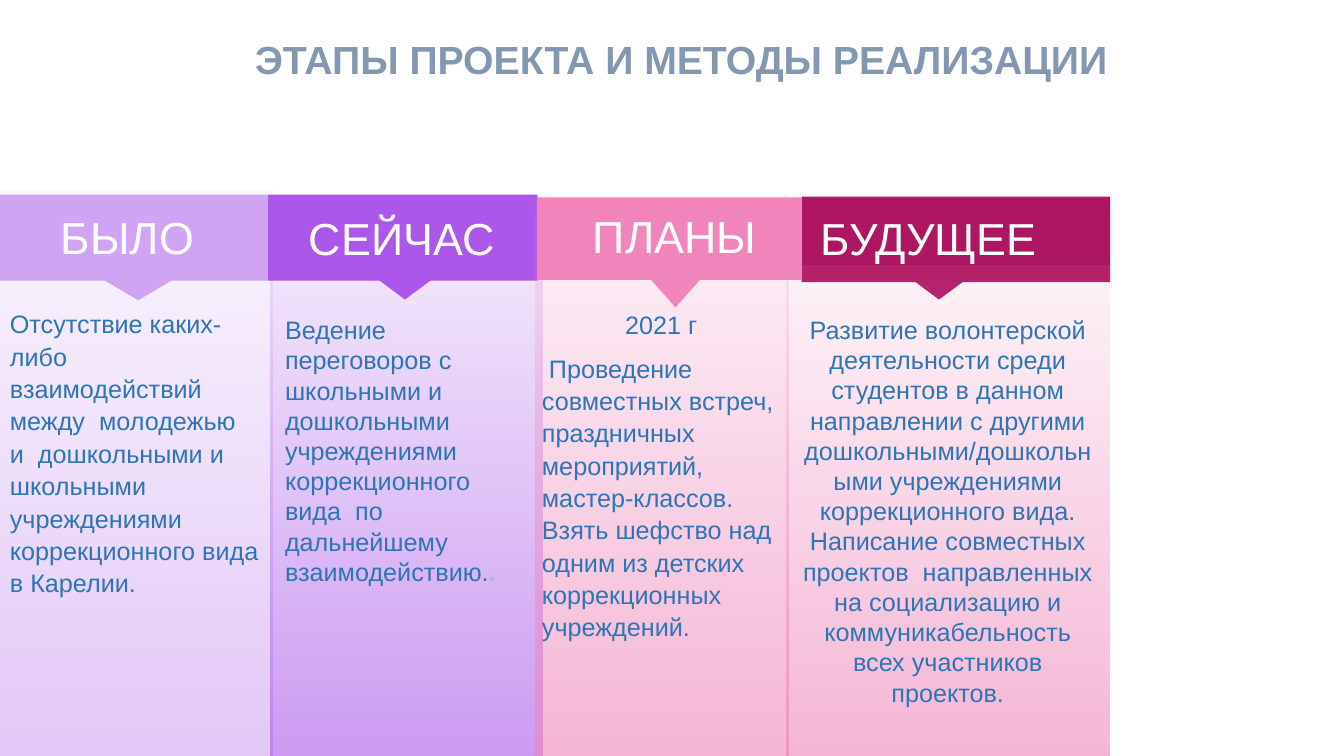
from lxml import etree
from pptx import Presentation
from pptx import util as u
from pptx.dml.color import RGBColor
from pptx.enum import shapes, text
from pptx.oxml import ns

Pt = u.Pt
SLIDE_W, SLIDE_H = 960, 540
FONT = "Arial"
COLORS = {"title": "8497B0", "body": "2E75B6", "dot": "ADB9CA", "white": "FFFFFF",
          "lilac": "D1A3F3", "violet": "AB58EA", "pink": "EF85BA", "berry": "AD1761"}
LEFT, CENTER = text.PP_ALIGN.LEFT, text.PP_ALIGN.CENTER
SPACED = {"line_spacing": 1.07, "space_after": Pt(8)}
SINGLE = {"line_spacing": 1.0, "space_after": Pt(8)}
TIGHT = {"line_spacing": 1.0, "space_after": Pt(0)}

# box is the header bar; arrow, caption and body are offset from its corner
COLUMNS = [
    {"box": (0, 139, 192, 61.5), "color": "lilac", "tint": "lilac",
     "panel": (-6.5, -3, 201.5), "arrow": (35.5, 38, 126.5, 37.5),
     "caption": (-4.5, 7), "head": "БЫЛО",
     "body": (0, 76.5, 193, 217.5), "format": SPACED,
     "paras": [(LEFT, [("Отсутствие каких-либо взаимодействий между  молодежью  "
                        "и  дошкольными и школьными учреждениями  "
                        "коррекционного вида в Карелии.", "body")])]},
    {"box": (191.5, 139, 192.5, 61.5), "color": "violet", "tint": "violet",
     "panel": (1.5, 2, 194.5), "arrow": (34.5, 28, 126.5, 47),
     "caption": (0, 8), "head": "СЕЙЧАС",
     "body": (5, 82, 189.5, 204), "format": SINGLE,
     "paras": [(LEFT, [("Ведение переговоров с школьными и дошкольными  "
                        "учреждениями коррекционного вида  по дальнейшему "
                        "взаимодействию.", "body"), (".", "dot")])]},
    {"box": (384, 141, 188.5, 59), "color": "pink", "tint": "pink",
     "panel": (-1.5, -1.5, 180.5), "arrow": (50, 24, 97, 54.5),
     "caption": (2.5, 4.5), "head": "ПЛАНЫ",
     "body": (-4, 75, 184.5, 248.5), "format": SPACED,
     "paras": [(CENTER, [("2021 г", "body")]),
               (LEFT, [(" Проведение совместных встреч, праздничных мероприятий, "
                        "мастер-классов. Взять шефство над одним из детских "
                        "коррекционных учреждений.", "body")])]},
    # The last column has its text in the panel, which lies on top
    {"box": (572.5, 140.5, 220.5, 61), "color": "berry", "tint": "pink",
     "panel": (-11, 49, 231), "arrow": (35, 26.5, 126.5, 47),
     "caption": (-4.5, 6.5), "head": "БУДУЩЕЕ",
     "body": None, "format": TIGHT,
     "paras": [(CENTER, [("Развитие волонтерской деятельности среди студентов в данном "
                          "направлении с другими дошкольными/дошкольными "
                          "учреждениями коррекционного вида.", "body")]),
               (CENTER, [("Написание совместных проектов  направленных на "
                          "социализацию и коммуникабельность всех участников "
                          "проектов.", "body")])]},
]


def rgb(name):
    return RGBColor.from_string(COLORS[name])


def set_all(obj, values):
    for name, value in values.items():
        setattr(obj, name, value)


def write(tf, paras, size, fmt, bold=False):
    """Fill a frame with (alignment, [(words, colour)]) paragraphs."""
    for i, (align, runs) in enumerate(paras):
        p = tf.paragraphs[0] if i == 0 else tf.add_paragraph()
        set_all(p, {"alignment": align, "space_before": Pt(0), **fmt})
        for words, color in runs:
            r = p.add_run()
            r.text = words
            set_all(r.font, {"size": Pt(size), "name": FONT,
                             "bold": bold or color == "dot"})
            r.font.color.rgb = rgb(color)


def add_text(s, box, paras, size, fmt):
    sp = s.shapes.add_textbox(*map(Pt, box))
    set_all(sp.text_frame, {"word_wrap": True,
                            "auto_size": text.MSO_AUTO_SIZE.SHAPE_TO_FIT_TEXT})
    write(sp.text_frame, paras, size, fmt)


def add_block(s, kind, box, color):
    sp = s.shapes.add_shape(kind, *map(Pt, box))
    sp.shadow.inherit = False
    sp.line.fill.background()
    sp.fill.solid()
    sp.fill.fore_color.rgb = rgb(color)
    return sp


def add_panel(s, box, color):
    """Rectangle that grows denser towards the bottom."""
    sp = add_block(s, shapes.MSO_SHAPE.RECTANGLE, box, color)
    sp.fill.gradient()
    sp.fill.gradient_angle = 270
    for stop, opacity in zip(sp.fill.gradient_stops, (10, 60)):
        stop.color.rgb = rgb(color)
    for clr, opacity in zip(sp.fill._xPr.iter(ns.qn("a:srgbClr")), (10, 60)):
        etree.SubElement(clr, ns.qn("a:alpha"), val=str(opacity * 1000))
    return sp


def add_title(s, box):
    sp = s.shapes.title
    set_all(sp, dict(zip(("left", "top", "width", "height"), map(Pt, box))))
    set_all(sp.text_frame, {"word_wrap": False,
                            "vertical_anchor": text.MSO_ANCHOR.TOP,
                            "auto_size": text.MSO_AUTO_SIZE.SHAPE_TO_FIT_TEXT})
    write(sp.text_frame, [(LEFT, [("ЭТАПЫ ПРОЕКТА И МЕТОДЫ РЕАЛИЗАЦИИ", "title")])],
          28, SPACED, bold=True)


def add_column(s, box, col):
    x, y, w, h = box

    def place(dx, dy, *size):
        return (x + dx, y + dy, *size)

    dx, dy, panel_w = col["panel"]
    panel_box = place(dx, dy, panel_w, SLIDE_H - y - dy)
    if col["body"]:
        add_panel(s, panel_box, col["tint"])

    # Header bar with its pointer
    arrow = add_block(s, shapes.MSO_SHAPE.DOWN_ARROW, place(*col["arrow"]), col["color"])
    arrow.adjustments[0] = arrow.adjustments[1] = 1.0
    add_block(s, shapes.MSO_SHAPE.RECTANGLE, box, col["color"])
    add_text(s, place(*col["caption"], 191, 46),
             [(CENTER, [(col["head"], "white")])], 32, SINGLE)

    # Description
    if col["body"]:
        add_text(s, place(*col["body"]), col["paras"], 18, col["format"])
    else:
        tf = add_panel(s, panel_box, col["tint"]).text_frame
        set_all(tf, {"word_wrap": True, "vertical_anchor": text.MSO_ANCHOR.MIDDLE})
        write(tf, col["paras"], 18, col["format"])


def main():
    prs = Presentation()
    set_all(prs, {"slide_width": Pt(SLIDE_W), "slide_height": Pt(SLIDE_H)})
    s = prs.slides.add_slide(prs.slide_layouts[5])
    add_title(s, (175, 19.5, 630, 41))
    for col in COLUMNS:
        add_column(s, col["box"], col)
    prs.save("out.pptx")


if __name__ == "__main__":
    main()
